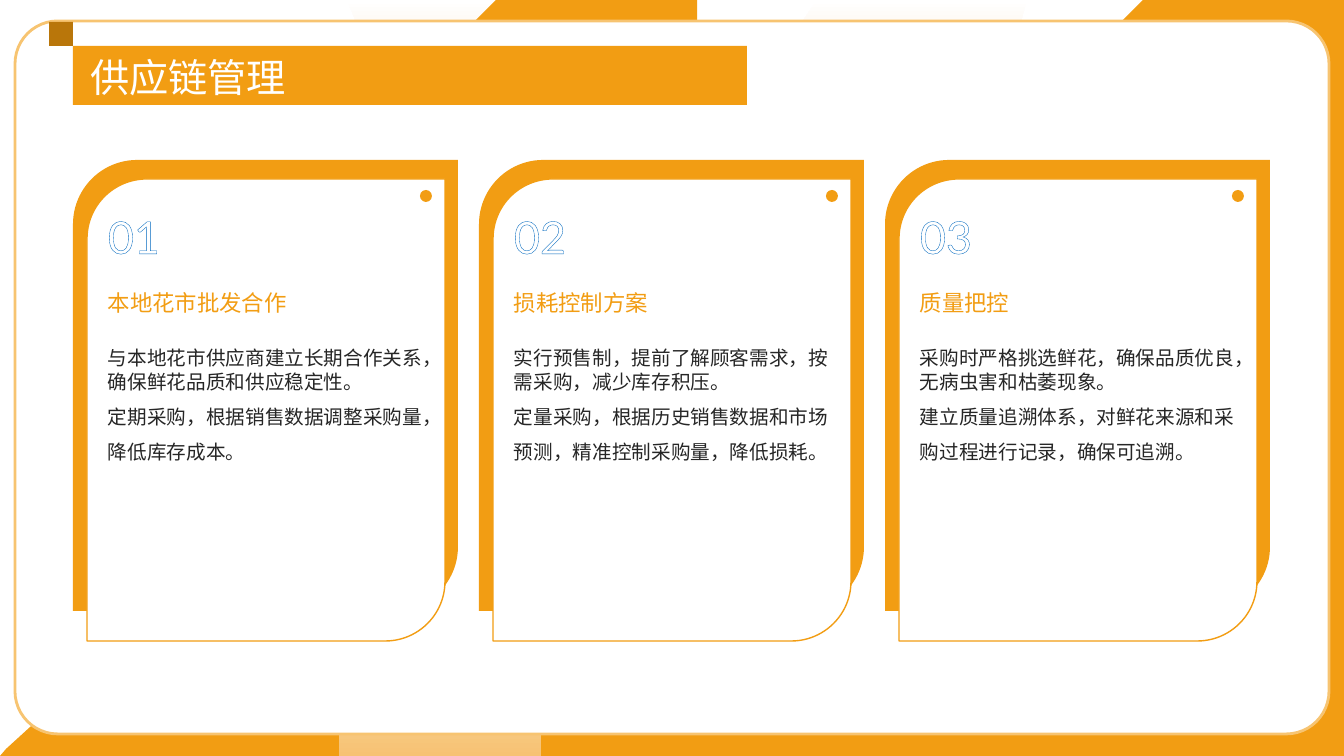
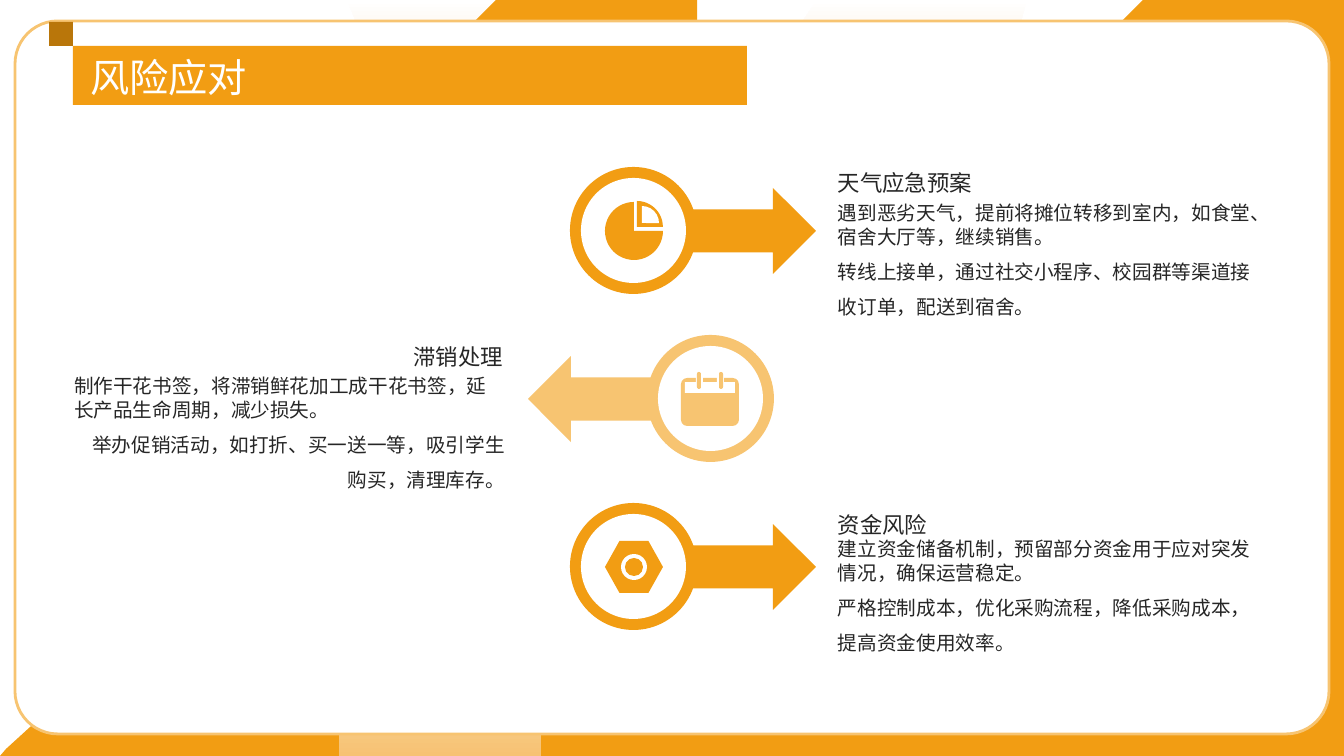
from lxml import etree
from pptx import Presentation
from pptx import util as u
from pptx.dml.color import RGBColor
from pptx.enum import shapes, text
from pptx.oxml import ns

PX = 12192000 / 1344
ORANGE, AMBER, BROWN = "F29D13", "F7C471", "B9760A"
WHITE, INK, BLUE = "FFFFFF", "262626", "0068BF"
CJK = "Noto Sans CJK SC"
KIND = shapes.MSO_SHAPE
LEFT, RIGHT = text.PP_ALIGN.LEFT, text.PP_ALIGN.RIGHT
TOP, MIDDLE, BOTTOM = text.MSO_ANCHOR.TOP, text.MSO_ANCHOR.MIDDLE, text.MSO_ANCHOR.BOTTOM


def add_shape(slide, kind, box, fill, line=None, width=1, adjust=()):
    shape = slide.shapes.add_shape(kind, *[round(side * PX) for side in box])
    shape.shadow.inherit = False
    shape.fill.solid()
    shape.fill.fore_color.rgb = RGBColor.from_string(fill)
    if line:
        shape.line.color.rgb = RGBColor.from_string(line)
        shape.line.width = u.Pt(width)
    else:
        shape.line.fill.background()
    for index, value in enumerate(adjust):
        shape.adjustments[index] = value


def add_text(slide, box, words, size, color, spacings, anchor=TOP, aligns=(LEFT, LEFT), font=CJK):
    shape = slide.shapes.add_textbox(*[round(side * PX) for side in box])
    frame = shape.text_frame
    frame.word_wrap = True
    frame.vertical_anchor = anchor
    frame.margin_left = frame.margin_right = frame.margin_top = frame.margin_bottom = 0
    frame.text = words
    for paragraph, spacing, align in zip(frame.paragraphs, spacings, aligns):
        paragraph.line_spacing = spacing
        paragraph.alignment = align
        run = paragraph.runs[0]
        run.font.size = u.Pt(size)
        run.font.name = font
        run.font.color.rgb = RGBColor.from_string(color)
        etree.SubElement(run.font._element, ns.qn("a:ea"), typeface=font)
    return shape


presentation = Presentation()
presentation.slide_width = round(1344 * PX)
presentation.slide_height = round(756 * PX)

backdrop = [
    ([WHITE, "FBF0E0"], [(347, 0), (558, 0), (598, 60), (372, 60)]),
    ([WHITE, "FBF0E0"], [(817, 0), (1027, 0), (1010, 60), (777, 60)]),
    ([ORANGE], [(496, 0), (697, 0), (697, 60), (436, 60)]),
    ([ORANGE], [(1143, 0), (1344, 0), (1344, 756), (0, 756), (6, 749), (40, 718), (1083, 718), (1083, 60)]),
    (["F7CC85", "F7C274"], [(339, 718), (541, 718), (541, 756), (339, 756)]),
]

slides = []
for title in ("供应链管理", "风险应对"):
    slide = presentation.slides.add_slide(presentation.slide_layouts[6])
    slides.append(slide)
    for colors, points in backdrop:
        builder = slide.shapes.build_freeform(*points[0], scale=PX)
        builder.add_line_segments(points[1:])
        shape = builder.convert_to_shape()
        shape.shadow.inherit = False
        shape.line.fill.background()
        if len(colors) == 1:
            shape.fill.solid()
            shape.fill.fore_color.rgb = RGBColor.from_string(colors[0])
        else:
            shape.fill.gradient()
            shape.fill.gradient_angle = 270
            for stop, color in zip(shape.fill.gradient_stops, colors):
                stop.color.rgb = RGBColor.from_string(color)
    add_shape(slide, KIND.ROUNDED_RECTANGLE, (15, 21, 1314, 713), WHITE, AMBER, 2, [0.06])
    add_shape(slide, KIND.RECTANGLE, (49, 22, 24, 24), BROWN)
    add_shape(slide, KIND.RECTANGLE, (73, 46, 674, 59), ORANGE)
    add_text(slide, (90, 49, 1179, 52), title, 28, WHITE, [1.1], MIDDLE)

supply, risk = slides

cards = [
    ("本地花市批发合作",
     "与本地花市供应商建立长期合作关系，确保鲜花品质和供应稳定性。\n"
     "定期采购，根据销售数据调整采购量，降低库存成本。"),
    ("损耗控制方案",
     "实行预售制，提前了解顾客需求，按需采购，减少库存积压。\n"
     "定量采购，根据历史销售数据和市场预测，精准控制采购量，降低损耗。"),
    ("质量把控",
     "采购时严格挑选鲜花，确保品质优良，无病虫害和枯萎现象。\n"
     "建立质量追溯体系，对鲜花来源和采购过程进行记录，确保可追溯。"),
]
for index, (heading, body) in enumerate(cards):
    x = 73 + 406 * index
    add_shape(supply, KIND.ROUND_2_DIAG_RECTANGLE, (x, 160, 385, 451), ORANGE)
    add_shape(supply, KIND.ROUND_2_DIAG_RECTANGLE, (x + 14, 179, 358, 462), WHITE, ORANGE)
    add_shape(supply, KIND.OVAL, (x + 347, 190, 12, 12), ORANGE)
    number = add_text(supply, (x + 35, 193, 92, 57), f"{index + 1:02}", 32, WHITE, [1.3], font="Lato")
    outline = etree.Element(ns.qn("a:ln"), w=str(u.Pt(1.25)))
    fill = etree.SubElement(outline, ns.qn("a:solidFill"))
    etree.SubElement(fill, ns.qn("a:srgbClr"), val=BLUE)
    number.text_frame.paragraphs[0].runs[0].font._element.insert(0, outline)
    add_text(supply, (x + 35, 260, 319, 77), heading, 16, ORANGE, [1.3], MIDDLE)
    add_text(supply, (x + 35, 346, 319, 244), body, 14, INK, [1, 1.5])

risks = [
    ("天气应急预案", 838, 127, 201, LEFT, ORANGE, KIND.RIGHT_ARROW, 660, 570,
     "遇到恶劣天气，提前将摊位转移到室内，如食堂、宿舍大厅等，继续销售。\n"
     "转线上接单，通过社交小程序、校园群等渠道接收订单，配送到宿舍。"),
    ("滞销处理", 74, 301, 374, RIGHT, AMBER, KIND.LEFT_ARROW, 528, 647,
     "制作干花书签，将滞销鲜花加工成干花书签，延长产品生命周期，减少损失。\n"
     "举办促销活动，如打折、买一送一等，吸引学生购买，清理库存。"),
    ("资金风险", 838, 469, 537, LEFT, ORANGE, KIND.RIGHT_ARROW, 660, 570,
     "建立资金储备机制，预留部分资金用于应对突发情况，确保运营稳定。\n"
     "严格控制成本，优化采购流程，降低采购成本，提高资金使用效率。"),
]
for index, (heading, x, heading_y, body_y, align, color, arrow, arrow_x, ring_x, body) in enumerate(risks):
    y = 167 + 168 * index
    heading_x = x - 2 if align == RIGHT else x
    add_text(risk, (heading_x, heading_y, 431, 69), heading, 16, INK, [1.3], BOTTOM, [align])
    add_text(risk, (x, body_y, 431, 144), body, 14, INK, [1, 1.5], TOP, [LEFT, align])
    add_shape(risk, arrow, (arrow_x, y + 21, 156, 86), color)
    add_shape(risk, KIND.OVAL, (ring_x, y, 127, 127), color)
    add_shape(risk, KIND.OVAL, (ring_x + 11, y + 11, 105, 105), WHITE)

icon_parts = [
    (KIND.PIE, (605, 202, 58, 58), ORANGE, [0, 162]),
    (KIND.PIE, (611, 201, 52, 52), ORANGE, [162, 0]),
    (KIND.PIE, (625, 206, 34, 34), WHITE, [162, 0]),
    (KIND.ROUNDED_RECTANGLE, (681, 378, 58, 48), AMBER, [0.13]),
    (KIND.RECTANGLE, (685, 382, 50, 11), WHITE, []),
    (KIND.RECTANGLE, (696, 377, 7, 6), WHITE, []),
    (KIND.RECTANGLE, (717, 377, 7, 6), WHITE, []),
    (KIND.ROUNDED_RECTANGLE, (697, 372, 4, 17), AMBER, [0.5]),
    (KIND.ROUNDED_RECTANGLE, (719, 372, 4, 17), AMBER, [0.5]),
    (KIND.HEXAGON, (605, 541, 58, 52), ORANGE, [0.28]),
    (KIND.OVAL, (621, 554, 26, 26), WHITE, []),
    (KIND.OVAL, (625, 558, 18, 18), ORANGE, []),
]
for kind, box, color, adjust in icon_parts:
    add_shape(risk, kind, box, color, adjust=adjust)

presentation.save("out.pptx")
